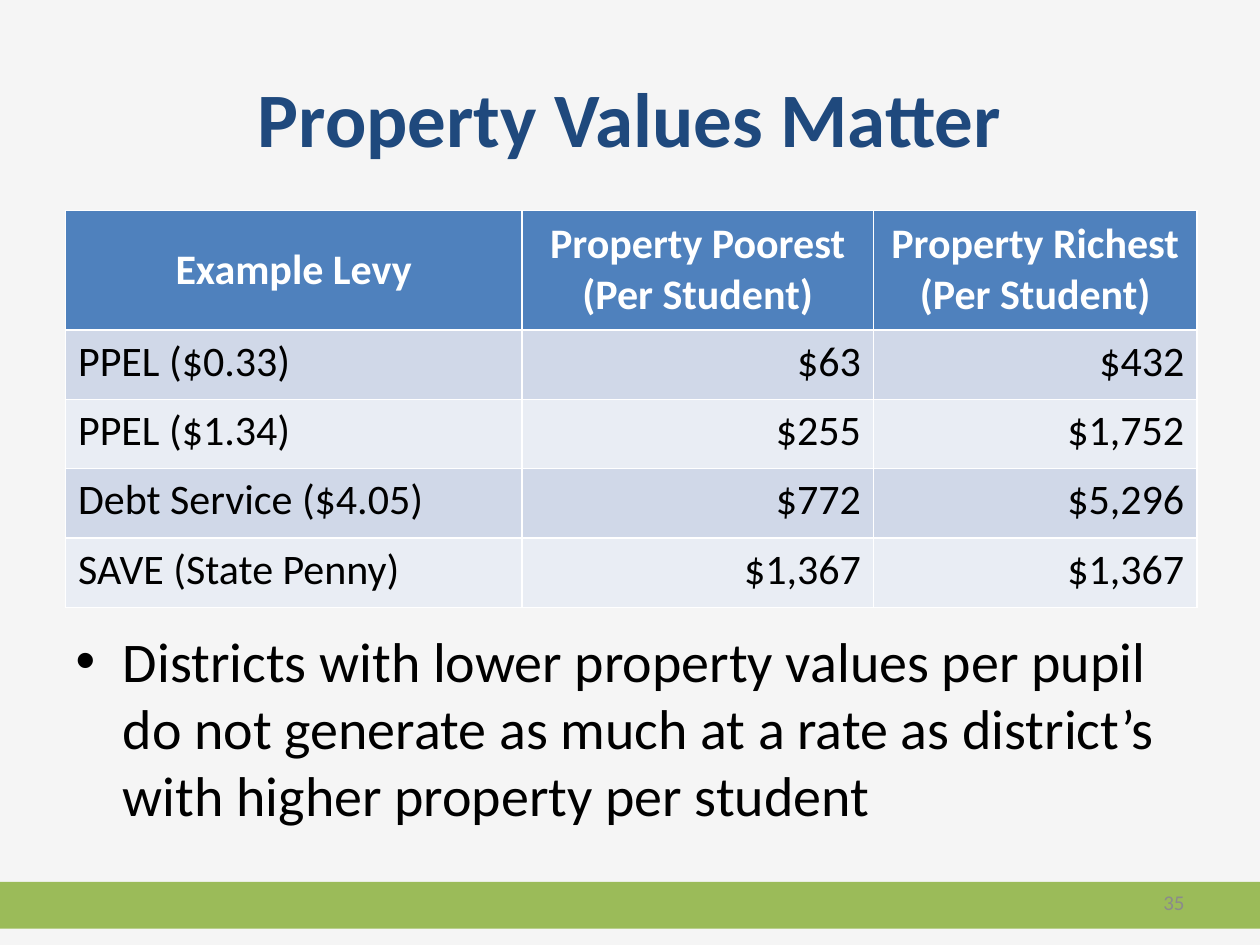
from pptx import Presentation
from pptx.dml.color import RGBColor
from pptx.enum.shapes import MSO_SHAPE
from pptx.enum.text import MSO_ANCHOR, PP_ALIGN
from pptx.util import Cm, Pt

FONT = "Calibri"
WIDTHS = [9.2, 7.09, 6.52]
HEIGHTS = [2.41] + [1.4] * 4
ROWS = [
    ["Example Levy", "Property Poorest (Per Student)", "Property Richest (Per Student)"],
    ["PPEL ($0.33)", "$63", "$432"],
    ["PPEL ($1.34)", "$255", "$1,752"],
    ["Debt Service ($4.05)", "$772", "$5,296"],
    ["SAVE (State Penny)", "$1,367", "$1,367"],
]


def color(code):
    return RGBColor.from_string(code)


def paint(fill, code):
    fill.solid()
    fill.fore_color.rgb = color(code)


def write(frame, text, size, code, bold=False, align=None):
    frame.text = text
    for par in frame.paragraphs:
        par.alignment = align
        for run in par.runs:
            run.font.name = FONT
            run.font.size = Pt(size)
            run.font.bold = bold
            run.font.color.rgb = color(code)


def place(shape, left, top, width, height):
    shape.left, shape.top = Cm(left), Cm(top)
    shape.width, shape.height = Cm(width), Cm(height)


def add_levies(slide):
    table = slide.shapes.add_table(
        len(ROWS), len(WIDTHS), Cm(1.32), Cm(4.24), Cm(sum(WIDTHS)), Cm(sum(HEIGHTS))
    ).table
    for col, width in zip(table.columns, WIDTHS):
        col.width = Cm(width)
    for row, height in zip(table.rows, HEIGHTS):
        row.height = Cm(height)
    for r, row in enumerate(ROWS):
        for c, text in enumerate(row):
            cell = table.cell(r, c)
            if r == 0:
                paint(cell.fill, "4F81BD")
                cell.vertical_anchor = MSO_ANCHOR.MIDDLE
                write(cell.text_frame, text, 24, "FFFFFF", True, PP_ALIGN.CENTER)
            else:
                paint(cell.fill, "D0D8E8" if r % 2 else "E9EDF4")
                align = PP_ALIGN.RIGHT if c else PP_ALIGN.LEFT
                write(cell.text_frame, text, 24, "000000", False, align)


def add_footer(slide, number):
    bar = slide.shapes.add_shape(MSO_SHAPE.RECTANGLE, 0, Cm(17.78), Cm(25.4), Cm(0.94))
    bar.shadow.inherit = False
    paint(bar.fill, "9BBB59")
    bar.line.fill.background()
    box = slide.shapes.add_textbox(Cm(18.2), Cm(17.68), Cm(5.93), Cm(1.01))
    box.text_frame.word_wrap = True
    box.text_frame.vertical_anchor = MSO_ANCHOR.MIDDLE
    write(box.text_frame, number, 12, "8B8B8B", False, PP_ALIGN.RIGHT)


def main():
    deck = Presentation()
    deck.slide_width, deck.slide_height = Cm(25.4), Cm(19.05)
    slide = deck.slides.add_slide(deck.slide_layouts[1])
    paint(slide.background.fill, "F5F5F5")

    title, body = slide.placeholders
    place(title, 1.27, 0.76, 22.86, 3.18)
    write(title.text_frame, "Property Values Matter", 44, "1F497D", True, PP_ALIGN.CENTER)
    place(body, 1.27, 12.5, 23.06, 5.16)
    write(
        body.text_frame,
        "Districts with lower property values per pupil do not generate "
        "as much at a rate as district’s with higher property per student",
        32, "000000",
    )

    add_levies(slide)
    add_footer(slide, "35")
    deck.save("out.pptx")


if __name__ == "__main__":
    main()
